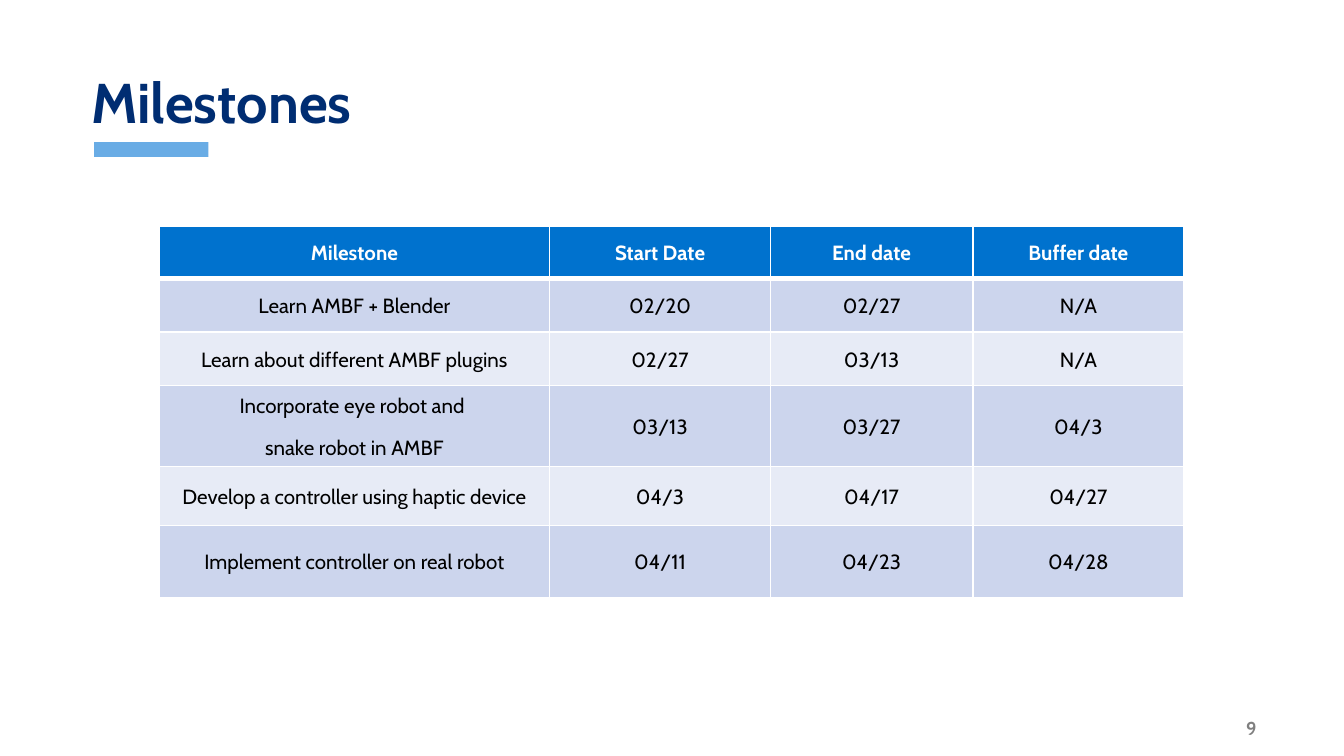
from lxml.etree import SubElement
from pptx import Presentation
from pptx.dml.color import RGBColor
from pptx.enum.shapes import MSO_SHAPE as Shape
from pptx.enum.text import MSO_ANCHOR as Anchor, PP_ALIGN as Align
from pptx.oxml.ns import qn
from pptx.util import Inches, Pt

WHITE = RGBColor(0xFF, 0xFF, 0xFF)
BLACK = RGBColor(0x00, 0x00, 0x00)
NAVY = RGBColor(0x00, 0x2D, 0x72)
GRAY = RGBColor(0x80, 0x80, 0x80)
ACCENT = RGBColor(0x69, 0xAC, 0xE5)
HEADER = RGBColor(0x00, 0x72, 0xCE)
BANDS = [RGBColor(0xE7, 0xEB, 0xF6), RGBColor(0xCC, 0xD5, 0xED)]

presentation = Presentation()
presentation.slide_width = Inches(10)
presentation.slide_height = presentation.slide_width * 9 // 16
slide = presentation.slides.add_slide(presentation.slide_layouts[6])
GRID = presentation.slide_width / 100


def grid(*counts):
    return [round(GRID * count) for count in counts]


def style(paragraph, size, color, bold):
    font = paragraph.font
    font.name = "Cabin"
    font.size = Pt(size)
    font.bold = bold
    font.color.rgb = color


accent_bar = slide.shapes.add_shape(Shape.RECTANGLE, *grid(7, 10.58, 8.5, 1.1))
accent_bar.shadow.inherit = False
accent_bar.fill.solid()
accent_bar.fill.fore_color.rgb = ACCENT
accent_bar.line.fill.background()

for text, box, size, color, anchor, align, spacing in [
    ("9", (86.3, 53.2, 8.7, 1.9), 10, GRAY, Anchor.MIDDLE, Align.RIGHT, 1),
    ("Milestones", (5.8, 1.2, 88.4, 9.4), 30, NAVY, Anchor.BOTTOM, Align.LEFT, 0.9),
]:
    text_frame = slide.shapes.add_textbox(*grid(*box)).text_frame
    text_frame.word_wrap = True
    text_frame.vertical_anchor = anchor
    text_frame.text = text
    paragraph = text_frame.paragraphs[0]
    paragraph.alignment = align
    paragraph.line_spacing = spacing
    style(paragraph, size, color, True)
    if align == Align.RIGHT:
        text_frame.margin_right = Inches(0.15)
        text_frame.margin_top = text_frame.margin_bottom = 0

rows = [
    ("Milestone", "Start Date", "End date", "Buffer date"),
    ("Learn AMBF + Blender", "02/20", "02/27", "N/A"),
    ("Learn about different AMBF plugins", "02/27", "03/13", "N/A"),
    ("Incorporate eye robot and \nsnake robot in AMBF", "03/13", "03/27", "04/3"),
    ("Develop a controller using haptic device", "04/3", "04/17", "04/27"),
    ("Implement controller on real robot", "04/11", "04/23", "04/28"),
]
column_widths = grid(29.04, 16.44, 15.04, 15.74)
row_heights = grid(3.9, 4, 4, 6, 4.4, 5.4)

table = slide.shapes.add_table(
    len(rows), len(column_widths), *grid(11.86, 16.8),
    sum(column_widths), sum(row_heights),
).table
for column, width in zip(table.columns, column_widths):
    column.width = width
for row, height in zip(table.rows, row_heights):
    row.height = height

for row_index, row in enumerate(rows):
    is_header = row_index == 0
    for column_index, text in enumerate(row):
        cell = table.cell(row_index, column_index)
        cell.vertical_anchor = Anchor.MIDDLE
        cell.margin_left = cell.margin_right = Inches(0.07)
        cell.margin_top = cell.margin_bottom = 0

        cell_properties = cell._tc.get_or_add_tcPr()
        for side in ("lnL", "lnR", "lnT", "lnB"):
            is_thick = (row_index, side) in [(0, "lnB"), (1, "lnT")]
            border = SubElement(cell_properties, qn(f"a:{side}"), w=str(Pt(3 if is_thick else 1)))
            border_fill = SubElement(border, qn("a:solidFill"))
            SubElement(border_fill, qn("a:srgbClr"), val=str(WHITE))
        cell.fill.solid()
        cell.fill.fore_color.rgb = HEADER if is_header else BANDS[row_index % 2]

        cell.text_frame.text = text
        for paragraph in cell.text_frame.paragraphs:
            paragraph.alignment = Align.CENTER
            paragraph.line_spacing = 1.07
            paragraph.space_after = Pt(8)
            style(paragraph, 11, WHITE if is_header else BLACK, is_header)

presentation.save("out.pptx")
